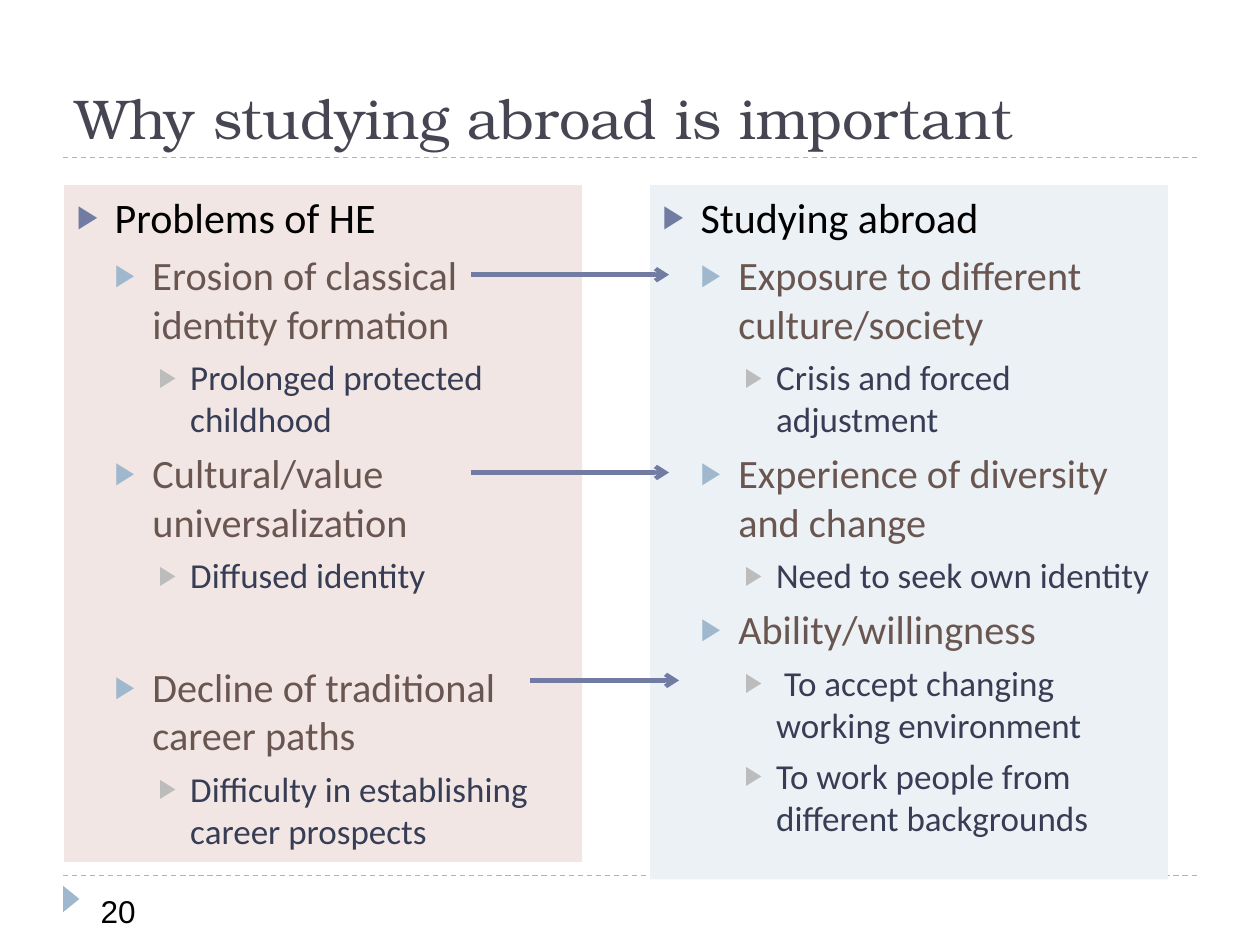
"""Build the slide linking problems of HE to the benefits of studying abroad."""
from lxml import etree
from pptx import Presentation
from pptx.dml.color import RGBColor
from pptx.enum.dml import MSO_LINE
from pptx.enum.shapes import MSO_CONNECTOR, MSO_SHAPE
from pptx.enum.text import MSO_ANCHOR, MSO_AUTO_SIZE, PP_ALIGN
from pptx.oxml.ns import qn
from pptx.util import Inches, Pt


def color(hex_string):
    """Return the colour for a hex string."""
    return RGBColor.from_string(hex_string)


def add_line(slide, x1, x2, y, hex_string, width):
    """Add a horizontal line without shadow."""
    line = slide.shapes.add_connector(
        MSO_CONNECTOR.STRAIGHT, Inches(x1), Inches(y), Inches(x2), Inches(y))
    line.line.color.rgb = color(hex_string)
    line.line.width = Pt(width)
    etree.SubElement(line._element.spPr, qn("a:effectLst"))
    return line


LEVELS = [
    {"size": 24, "color": "000000", "bullet": "727CA3", "margin": 0.3, "indent": -0.3, "before": 6},
    {"size": 23, "color": "6A5650", "bullet": "9FB8CD", "margin": 0.6, "indent": -0.3, "before": 5},
    {"size": 20, "color": "373D54", "bullet": "BCBCBC", "margin": 0.9, "indent": -0.25, "before": 5},
]
PROBLEMS = [
    (0, "Problems of HE"),
    (1, "Erosion of classical identity formation"),
    (2, "Prolonged protected childhood"),
    (1, "Cultural/value universalization"),
    (2, "Diffused identity"),
    (1, "Decline of traditional career paths"),
    (2, "Difficulty in establishing career prospects"),
]
BENEFITS = [
    (0, "Studying abroad"),
    (1, "Exposure to different culture/society"),
    (2, "Crisis and forced adjustment"),
    (1, "Experience of diversity and change"),
    (2, "Need to seek own identity"),
    (1, "Ability/willingness"),
    (2, " To accept changing working environment"),
    (2, "To work people from different backgrounds"),
]
PANELS = [(1, 0.51, 5.37, "F1E6E3", PROBLEMS), (2, 5.16, 5.51, "ECF1F5", BENEFITS)]

presentation = Presentation()
presentation.slide_width = Inches(10)
presentation.slide_height = Inches(7.5)
slide = presentation.slides.add_slide(presentation.slide_layouts[3])

title = slide.shapes.title
title.left, title.top, title.width, title.height = Inches(0.5), Inches(0.17), Inches(9), Inches(1.08)
title.text_frame.text = "Why studying abroad is important"
title.text_frame.auto_size = MSO_AUTO_SIZE.NONE
title.text_frame.vertical_anchor = MSO_ANCHOR.BOTTOM
title.text_frame.paragraphs[0].alignment = PP_ALIGN.LEFT
title_font = title.text_frame.paragraphs[0].runs[0].font
title_font.name, title_font.size = "TeX Gyre Bonum", Pt(32)
title_font.color.rgb = color("464653")

for y in (6.95, 1.25):
    rule = add_line(slide, 0.5, 9.5, y, "9FB8CD", 0.75)
    rule.line.dash_style = MSO_LINE.DASH
    title._element.addprevious(rule._element)

for index, left, height, fill, items in PANELS:
    panel = slide.placeholders[index]
    panel.left, panel.top, panel.width, panel.height = (
        Inches(left), Inches(1.47), Inches(4.11), Inches(height))
    panel.fill.solid()
    panel.fill.fore_color.rgb = color(fill)
    text_frame = panel.text_frame
    text_frame.text = "\n".join(text for level, text in items)
    text_frame.auto_size = MSO_AUTO_SIZE.NONE
    for paragraph, (level, text) in zip(text_frame.paragraphs, items):
        style = LEVELS[level]
        paragraph.level = level
        paragraph.space_before = Pt(style["before"])
        font = paragraph.runs[0].font
        font.name, font.size = "Calibri", Pt(style["size"])
        font.color.rgb = color(style["color"])
        properties = paragraph._p.get_or_add_pPr()
        properties.set("marL", str(Inches(style["margin"])))
        properties.set("indent", str(Inches(style["indent"])))
        bullet_color = etree.SubElement(properties, qn("a:buClr"))
        etree.SubElement(bullet_color, qn("a:srgbClr"), val=style["bullet"])
        etree.SubElement(properties, qn("a:buSzPct"), val="76000")
        etree.SubElement(properties, qn("a:buFont"), typeface="Arial")
        etree.SubElement(properties, qn("a:buChar"), char="▶")

slide.placeholders[1].text_frame.paragraphs[5].space_before = Pt(38)

for x1, x2, y in [(3.74, 5.31, 2.18), (3.74, 5.31, 3.75), (4.21, 5.39, 5.4)]:
    arrow = add_line(slide, x1, x2, y, "727CA3", 2.5)
    etree.SubElement(arrow.line._get_or_add_ln(), qn("a:tailEnd"), type="arrow")

marker = slide.shapes.add_shape(
    MSO_SHAPE.ISOSCELES_TRIANGLE, Inches(0.46), Inches(7.07), Inches(0.21), Inches(0.13))
marker.rotation = 90
marker.shadow.inherit = False
marker.fill.solid()
marker.fill.fore_color.rgb = color("9FB8CD")
marker.line.fill.background()

number_box = slide.shapes.add_textbox(Inches(0.7), Inches(7.03), Inches(1.33), Inches(0.4))
number_box.text_frame.word_wrap = True
number_box.text_frame.text = "20"
number_font = number_box.text_frame.paragraphs[0].runs[0].font
number_font.name, number_font.size = "Arial", Pt(18)
number_font.color.rgb = color("000000")

presentation.save("out.pptx")
